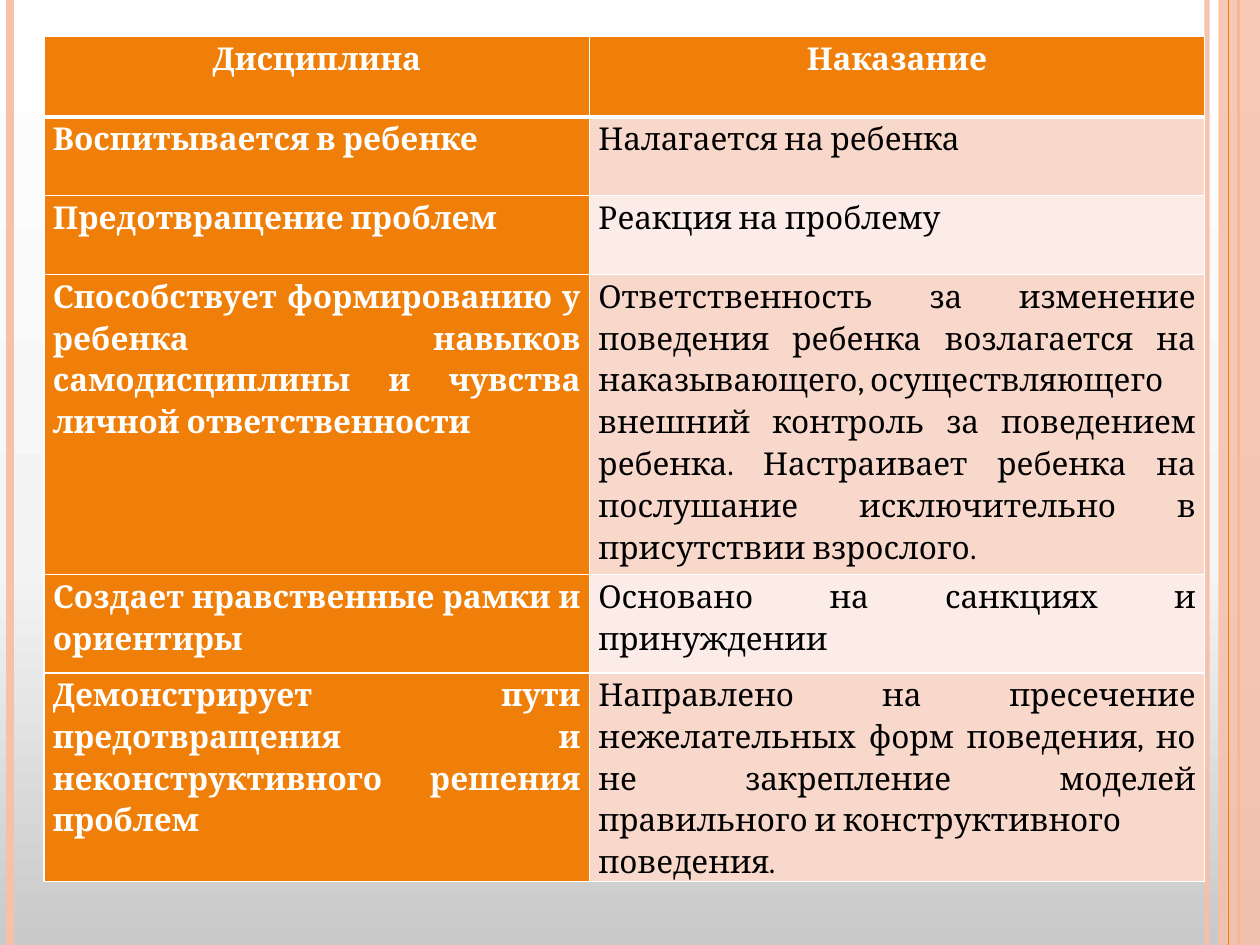
from copy import deepcopy

from pptx import Presentation
from pptx.dml.color import RGBColor
from pptx.enum.shapes import MSO_CONNECTOR, MSO_SHAPE
from pptx.enum.text import PP_ALIGN
from pptx.oxml.ns import qn
from pptx.oxml.xmlchemy import OxmlElement
from pptx.util import Inches, Pt

ORANGE = RGBColor(0xF0, 0x7F, 0x09)
PEACH = RGBColor(0xF6, 0xC0, 0xAB)
BAND_DARK = RGBColor(0xF9, 0xD8, 0xCC)
BAND_LIGHT = RGBColor(0xFC, 0xEC, 0xE7)
WHITE = RGBColor(0xFF, 0xFF, 0xFF)
BLACK = RGBColor(0x00, 0x00, 0x00)
GRADIENT = [(0, RGBColor(0xC9, 0xC9, 0xC9)), (0.4, RGBColor(0xF4, 0xF4, 0xF4)), (1, WHITE)]

SLIDE_HEIGHT = 7.5
COLUMN_WIDTHS = [4.33, 4.88]
ROW_HEIGHTS = [0.64, 0.62, 0.63, 2.38, 0.78, 1.58]
ROWS = [
    ("Дисциплина", "Наказание"),
    ("Воспитывается в ребенке", "Налагается на ребенка"),
    ("Предотвращение проблем", "Реакция на проблему"),
    ("Способствует формированию у ребенка навыков самодисциплины и чувства личной ответственности",
     "Ответственность за изменение поведения ребенка возлагается на наказывающего, осуществляющего\n"
     "внешний контроль за поведением ребенка. Настраивает ребенка на послушание исключительно "
     "в присутствии взрослого."),
    ("Создает нравственные рамки и ориентиры", "Основано на санкциях и принуждении"),
    ("Демонстрирует пути предотвращения и неконструктивного решения проблем",
     "Направлено на пресечение нежелательных форм поведения, но не закрепление моделей "
     "правильного и конструктивного\nповедения."),
]


def write_text(text_frame, text, color=BLACK, bold=False, align=PP_ALIGN.JUSTIFY, size=18, font="Cambria"):
    """Fill a text frame with one paragraph per line of text."""
    for index, line in enumerate(text.split("\n")):
        paragraph = text_frame.add_paragraph() if index else text_frame.paragraphs[0]
        paragraph.alignment = align
        paragraph.line_spacing = 1.15
        run = paragraph.add_run()
        run.text = line
        run.font.name = font
        run.font.size = Pt(size)
        run.font.bold = bold
        run.font.color.rgb = color


def set_opacity(element, percent):
    """Make the first solid colour inside an element translucent."""
    alpha = OxmlElement("a:alpha")
    alpha.set("val", str(percent * 1000))
    element.find(".//" + qn("a:srgbClr")).append(alpha)


class SlideBuilder:
    """Holds the current slide and draws its elements in one style."""

    def __init__(self, slide):
        """Keep the slide to draw on."""
        self.slide = slide

    def background(self, stops):
        """Paint a three-stop gradient rising from the bottom edge."""
        fill = self.slide.background.fill
        fill.gradient()
        fill.gradient_angle = 90
        stop_list = self.slide.element.find(".//" + qn("a:gsLst"))
        stop_list.append(deepcopy(stop_list[0]))
        for stop, (position, color) in zip(fill.gradient_stops, stops):
            stop.position = position
            stop.color.rgb = color

    def vertical_line(self, left, color, width, opacity=100):
        """Draw a line down the full slide height."""
        connector = self.slide.shapes.add_connector(
            MSO_CONNECTOR.STRAIGHT, Inches(left), 0, Inches(left), Inches(SLIDE_HEIGHT))
        connector.line.color.rgb = color
        connector.line.width = Pt(width)
        properties = connector.element.spPr
        properties.append(OxmlElement("a:effectLst"))
        if opacity < 100:
            set_opacity(properties, opacity)

    def side_band(self, left, width, color, opacity):
        """Draw a translucent band down the full slide height."""
        shape = self.slide.shapes.add_shape(
            MSO_SHAPE.RECTANGLE, Inches(left), 0, Inches(width), Inches(SLIDE_HEIGHT))
        shape.shadow.inherit = False
        shape.fill.solid()
        shape.fill.fore_color.rgb = color
        shape.line.fill.background()
        set_opacity(shape.element.spPr, opacity)

    def cell_borders(self, cell, top=1, bottom=1):
        """Give a cell white borders of the given widths."""
        properties = cell._tc.get_or_add_tcPr()
        widths = {"a:lnL": 1, "a:lnR": 1, "a:lnT": top, "a:lnB": bottom}
        for index, (tag, width) in enumerate(widths.items()):
            border = OxmlElement(tag)
            border.set("w", str(Pt(width)))
            fill = OxmlElement("a:solidFill")
            color = OxmlElement("a:srgbClr")
            color.set("val", str(WHITE))
            fill.append(color)
            border.append(fill)
            properties.insert(index, border)

    def table(self, left, top, column_widths, row_heights, rows):
        """Draw a table with an orange header row and first column."""
        table = self.slide.shapes.add_table(
            len(rows), len(column_widths), Inches(left), Inches(top),
            Inches(sum(column_widths)), Inches(sum(row_heights))).table
        for column, width in zip(table.columns, column_widths):
            column.width = Inches(width)
        for row_index, (row, height, texts) in enumerate(zip(table.rows, row_heights, rows)):
            row.height = Inches(height)
            is_header = row_index == 0
            band = BAND_DARK if row_index % 2 else BAND_LIGHT
            for column_index, (cell, text) in enumerate(zip(row.cells, texts)):
                strong = is_header or column_index == 0
                cell.margin_left = cell.margin_right = Inches(0.07)
                cell.margin_top = cell.margin_bottom = 0
                cell.fill.solid()
                cell.fill.fore_color.rgb = ORANGE if strong else band
                self.cell_borders(cell, top=3 if row_index == 1 else 1, bottom=3 if is_header else 1)
                write_text(cell.text_frame, text, color=WHITE if strong else BLACK, bold=strong,
                           align=PP_ALIGN.CENTER if is_header else PP_ALIGN.JUSTIFY)


def main():
    """Build the comparison slide and save it."""
    presentation = Presentation()
    presentation.slide_width = Inches(10)
    presentation.slide_height = Inches(SLIDE_HEIGHT)
    builder = SlideBuilder(presentation.slides.add_slide(presentation.slide_layouts[6]))
    builder.background(GRADIENT)
    builder.vertical_line(9.58, PEACH, 3, opacity=93)
    builder.vertical_line(0.08, PEACH, 4.5)
    builder.vertical_line(9.83, ORANGE, 1.5)
    builder.side_band(9.67, 0.33, PEACH, opacity=87)
    builder.vertical_line(9.75, ORANGE, 0.75)
    builder.table(0.35, 0.29, COLUMN_WIDTHS, ROW_HEIGHTS, ROWS)
    presentation.save("out.pptx")


if __name__ == "__main__":
    main()
